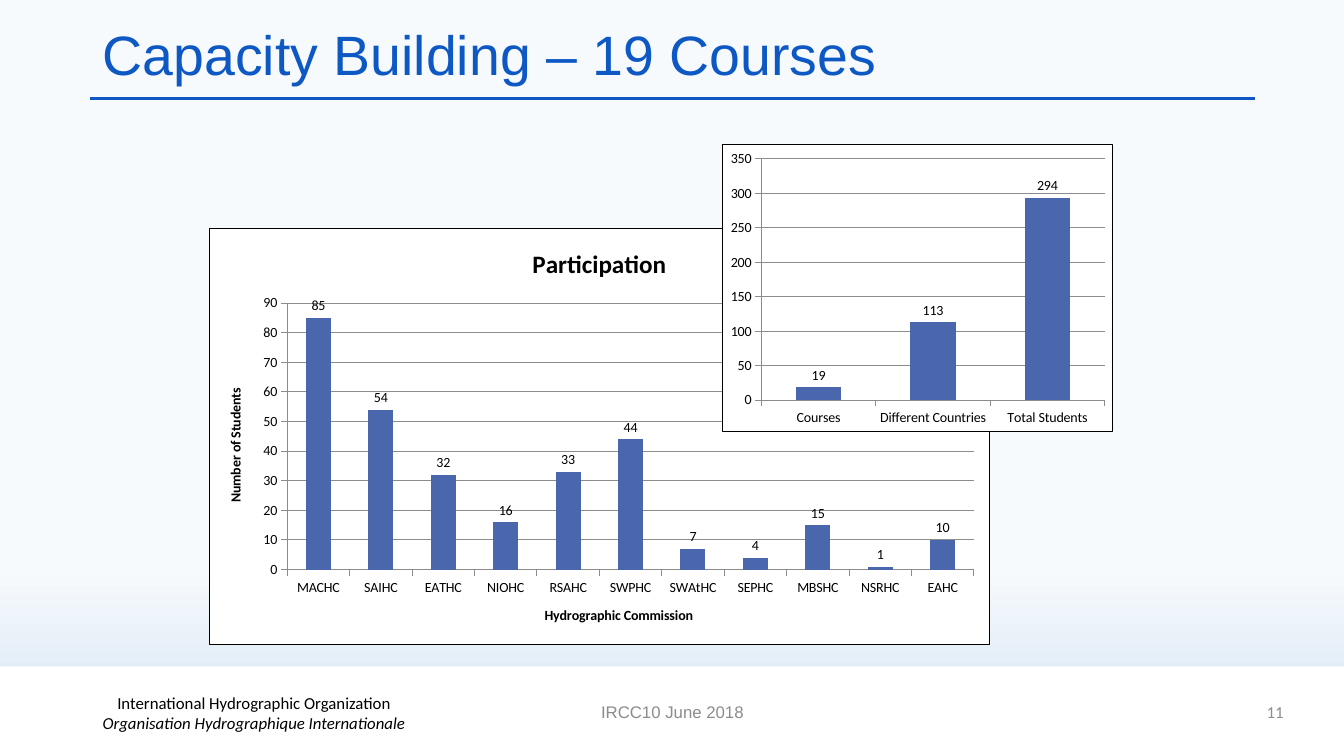
from dataclasses import dataclass

from lxml import etree
from pptx import Presentation
from pptx.chart.data import CategoryChartData
from pptx.dml.color import RGBColor
from pptx.enum.chart import XL_CHART_TYPE, XL_LABEL_POSITION, XL_TICK_MARK
from pptx.enum.shapes import MSO_CONNECTOR, MSO_SHAPE
from pptx.enum.text import MSO_ANCHOR, PP_ALIGN
from pptx.oxml import parse_xml
from pptx.oxml.ns import nsdecls, qn
from pptx.util import Inches, Pt


@dataclass(frozen=True)
class Theme:
    blue: RGBColor = RGBColor.from_string("0E58C4")
    bar: RGBColor = RGBColor.from_string("4A66AC")
    black: RGBColor = RGBColor.from_string("000000")
    white: RGBColor = RGBColor.from_string("FFFFFF")
    gray: RGBColor = RGBColor.from_string("8C8C8C")
    sky_top: RGBColor = RGBColor.from_string("F7FAFD")
    sky_bottom: RGBColor = RGBColor.from_string("D0E2F1")
    title_size: float = 39.6
    footer_size: float = 12
    chart_size: float = 10
    chart_title_size: float = 18


theme = Theme()
presentation = Presentation()
presentation.slide_width = Inches(13.33)
presentation.slide_height = Inches(7.5)
slide = presentation.slides.add_slide(presentation.slide_layouts[6])


def add_text(text, box, size=theme.footer_size, font="Arial", color=theme.black,
             align=PP_ALIGN.CENTER, line_spacing=None, italic_line=None):
    """Add one paragraph, with an optional italic line below the text."""
    frame = slide.shapes.add_textbox(*map(Inches, box)).text_frame
    frame.word_wrap = True
    frame.vertical_anchor = MSO_ANCHOR.MIDDLE
    paragraph = frame.paragraphs[0]
    paragraph.alignment = align
    paragraph.line_spacing = line_spacing
    paragraph.font.size = Pt(size)
    paragraph.font.name = font
    paragraph.font.color.rgb = color
    paragraph.add_run().text = text
    if italic_line:
        paragraph.add_line_break()
        paragraph.add_run().text = italic_line
        paragraph.runs[-1].font.italic = True
    for run in paragraph.runs:
        run.font.size = Pt(size)
        run.font.name = font
        run.font.color.rgb = color


def add_column_chart(values, box, plot_box, top, step, title=None, axis_titles=()):
    """Add a bordered column chart; plot_box holds fractions of the chart."""
    data = CategoryChartData()
    data.categories = list(values)
    data.add_series("Series 1", list(values.values()))
    chart = slide.shapes.add_chart(
        XL_CHART_TYPE.COLUMN_CLUSTERED, *map(Inches, box), data).chart
    chart.has_legend = False
    chart.font.size = Pt(theme.chart_size)
    chart.font.name = "Calibri"
    chart.font.color.rgb = theme.black
    chart.has_title = title is not None

    titles = [(chart, title, theme.chart_title_size)] if title else []
    axes = (chart.category_axis, chart.value_axis)
    titles += [(axis, text, theme.chart_size) for axis, text in zip(axes, axis_titles)]
    for owner, text, size in titles:
        owner.has_title = True
        title_object = owner.chart_title if owner is chart else owner.axis_title
        title_object.text_frame.text = text
        font = title_object.text_frame.paragraphs[0].runs[0].font
        font.size = Pt(size)
        font.bold = True
        font.name = "Calibri"
        font.color.rgb = theme.black

    for axis in axes:
        axis.major_tick_mark = XL_TICK_MARK.OUTSIDE
        axis.minor_tick_mark = XL_TICK_MARK.NONE
        axis.format.line.color.rgb = theme.gray
        axis.format.line.width = Pt(0.75)
    value_axis = chart.value_axis
    value_axis.minimum_scale = 0
    value_axis.maximum_scale = top
    value_axis.major_unit = step
    value_axis.has_major_gridlines = True
    value_axis.major_gridlines.format.line.color.rgb = theme.gray
    value_axis.major_gridlines.format.line.width = Pt(0.75)

    plot = chart.plots[0]
    plot.gap_width = 150
    plot.vary_by_categories = False
    series_fill = plot.series[0].format.fill
    series_fill.solid()
    series_fill.fore_color.rgb = theme.bar
    plot.has_data_labels = True
    plot.data_labels.show_value = True
    plot.data_labels.position = XL_LABEL_POSITION.OUTSIDE_END

    chart_space = chart.element
    chart_space.find(qn("c:txPr")).addprevious(parse_xml(
        f'<c:spPr {nsdecls("c", "a")}>'
        f'<a:solidFill><a:srgbClr val="{theme.white}"/></a:solidFill>'
        f'<a:ln w="{Pt(0.75)}"><a:solidFill><a:srgbClr val="{theme.black}"/>'
        '</a:solidFill></a:ln></c:spPr>'))
    plot_area = chart_space.find(f'.//{qn("c:plotArea")}')
    for layout in plot_area.findall(qn("c:layout")):
        plot_area.remove(layout)
    settings = [("layoutTarget", "inner"), ("xMode", "edge"), ("yMode", "edge")]
    settings += zip("xywh", plot_box)
    content = "".join(f'<c:{name} val="{value}"/>' for name, value in settings)
    plot_area.insert(0, parse_xml(
        f'<c:layout {nsdecls("c")}><c:manualLayout>{content}</c:manualLayout></c:layout>'))


# Background, title rule and footer band
background = slide.background.fill
background.gradient()
background.gradient_angle = 270
sky = ((0.75, theme.sky_top), (1, theme.sky_bottom))
for stop, (position, color) in zip(background.gradient_stops, sky):
    stop.position = position
    stop.color.rgb = color

title_rule = slide.shapes.add_connector(
    MSO_CONNECTOR.STRAIGHT, Inches(0.89), Inches(0.98), Inches(12.45), Inches(0.98))
title_rule.line.color.rgb = theme.blue
title_rule.line.width = Pt(2.25)
etree.SubElement(title_rule.element.spPr, qn("a:effectLst"))

footer_band = slide.shapes.add_shape(
    MSO_SHAPE.RECTANGLE, Inches(0), Inches(6.61), Inches(13.33), Inches(0.89))
footer_band.shadow.inherit = False
footer_band.fill.solid()
footer_band.fill.fore_color.rgb = theme.white
footer_band.line.fill.background()

# Title and footer text
add_text("International Hydrographic Organization", (0.27, 6.87, 4.5, 0.4),
         font="Calibri", italic_line="Organisation Hydrographique Internationale")
add_text("Capacity Building – 19 Courses", (0.92, 0.28, 11.5, 0.59),
         size=theme.title_size, color=theme.blue, align=PP_ALIGN.LEFT, line_spacing=0.9)
add_text("IRCC10 June 2018", (4.42, 6.86, 4.5, 0.4), color=theme.gray)
add_text("11", (9.83, 6.86, 3, 0.4), font="Calibri", color=theme.gray,
         align=PP_ALIGN.RIGHT)

# Charts
students_by_commission = {
    "MACHC": 85, "SAIHC": 54, "EATHC": 32, "NIOHC": 16, "RSAHC": 33, "SWPHC": 44,
    "SWAtHC": 7, "SEPHC": 4, "MBSHC": 15, "NSRHC": 1, "EAHC": 10,
}
add_column_chart(students_by_commission, (2.07, 2.26, 7.75, 4.14),
                 (0.1, 0.18, 0.88, 0.64), top=90, step=10, title="Participation",
                 axis_titles=("Hydrographic Commission", "Number of Students"))
totals = {"Courses": 19, "Different Countries": 113, "Total Students": 294}
add_column_chart(totals, (7.16, 1.43, 3.88, 2.86), (0.1, 0.05, 0.88, 0.84),
                 top=350, step=50)

presentation.save("out.pptx")
